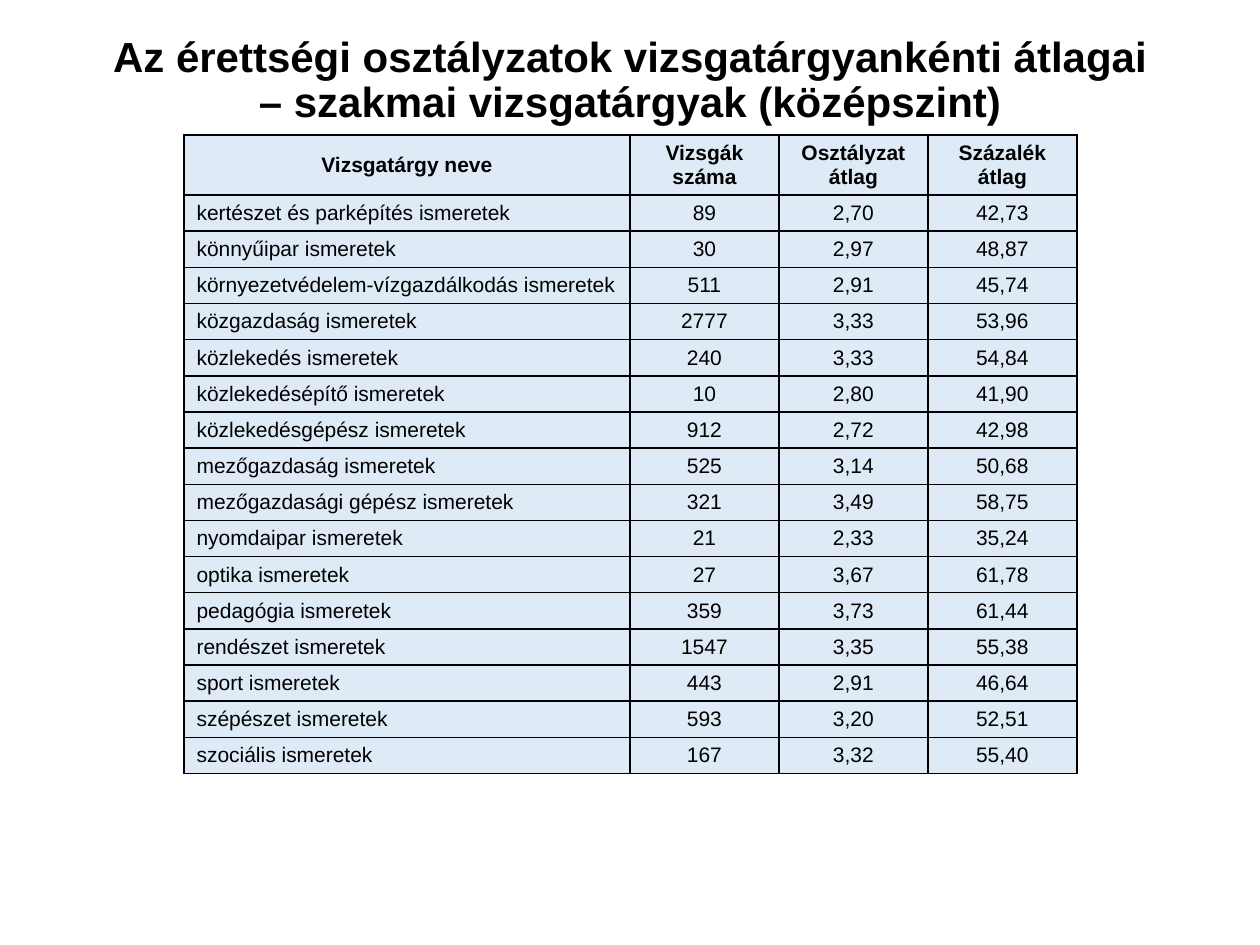
import pptx
import pptx.util
import pptx.dml.color
import pptx.enum.text
import pptx.oxml
import pptx.oxml.ns

TITLE = "Az érettségi osztályzatok vizsgatárgyankénti átlagai – szakmai vizsgatárgyak (középszint)"
HEADER = ("Vizsgatárgy neve", "Vizsgák száma", "Osztályzat átlag", "Százalék átlag")
SUBJECTS = [
    ("kertészet és parképítés ismeretek", "89", "2,70", "42,73"),
    ("könnyűipar ismeretek", "30", "2,97", "48,87"),
    ("környezetvédelem-vízgazdálkodás ismeretek", "511", "2,91", "45,74"),
    ("közgazdaság ismeretek", "2777", "3,33", "53,96"),
    ("közlekedés ismeretek", "240", "3,33", "54,84"),
    ("közlekedésépítő ismeretek", "10", "2,80", "41,90"),
    ("közlekedésgépész ismeretek", "912", "2,72", "42,98"),
    ("mezőgazdaság ismeretek", "525", "3,14", "50,68"),
    ("mezőgazdasági gépész ismeretek", "321", "3,49", "58,75"),
    ("nyomdaipar ismeretek", "21", "2,33", "35,24"),
    ("optika ismeretek", "27", "3,67", "61,78"),
    ("pedagógia ismeretek", "359", "3,73", "61,44"),
    ("rendészet ismeretek", "1547", "3,35", "55,38"),
    ("sport ismeretek", "443", "2,91", "46,64"),
    ("szépészet ismeretek", "593", "3,20", "52,51"),
    ("szociális ismeretek", "167", "3,32", "55,40"),
]
COLUMNS = (446, 149, 149, 149)
HEADER_HEIGHT, ROW_HEIGHT = 60, 36
FILL, BLACK = "DEEBF7", "000000"
CENTER = pptx.enum.text.PP_ALIGN.CENTER
LEFT = pptx.enum.text.PP_ALIGN.LEFT
MIDDLE = pptx.enum.text.MSO_ANCHOR.MIDDLE


def px(n):
    return pptx.util.Emu(round(n * 914400 / 126))


def rgb(value):
    return pptx.dml.color.RGBColor.from_string(value)


def write(tf, text, size, bold, align):
    tf.text = text
    p = tf.paragraphs[0]
    p.alignment = align
    font = p.runs[0].font
    style = {"name": "Arial", "size": pptx.util.Pt(size), "bold": bold}
    for key, value in style.items():
        setattr(font, key, value)
    font.color.rgb = rgb(BLACK)
    return p


def add_borders(cell):
    tcPr = cell._tc.get_or_add_tcPr()
    for i, side in enumerate(("lnL", "lnR", "lnT", "lnB")):
        tcPr.insert(i, pptx.oxml.parse_xml(
            f'<a:{side} {pptx.oxml.ns.nsdecls("a")} w="12700"><a:solidFill>'
            f'<a:srgbClr val="{BLACK}"/></a:solidFill></a:{side}>'))


prs = pptx.Presentation()
prs.slide_width, prs.slide_height = px(1260), px(945)
s = prs.slides.add_slide(prs.slide_layouts[5])

title = s.shapes.title
title.left, title.top, title.width, title.height = map(px, (87, -10, 1086, 183))
tf = title.text_frame
p = write(tf, TITLE, 24, True, CENTER)
p.line_spacing = 0.9
tf.word_wrap = True
tf.vertical_anchor = MIDDLE
tf.auto_size = pptx.enum.text.MSO_AUTO_SIZE.NONE

rows = [HEADER] + SUBJECTS
heights = [HEADER_HEIGHT] + [ROW_HEIGHT] * len(SUBJECTS)
table = s.shapes.add_table(len(rows), len(COLUMNS), px(184), px(135),
                           px(sum(COLUMNS)), px(sum(heights))).table
table.horz_banding = False
for column, width in zip(table.columns, COLUMNS):
    column.width = px(width)
for r, (row, height) in enumerate(zip(rows, heights)):
    table.rows[r].height = px(height)
    for c, text in enumerate(row):
        cell = table.cell(r, c)
        cell.vertical_anchor = MIDDLE
        cell.fill.solid()
        cell.fill.fore_color.rgb = rgb(FILL)
        add_borders(cell)
        write(cell.text_frame, text, 12, r == 0, LEFT if r and c == 0 else CENTER)

prs.save("out.pptx")
